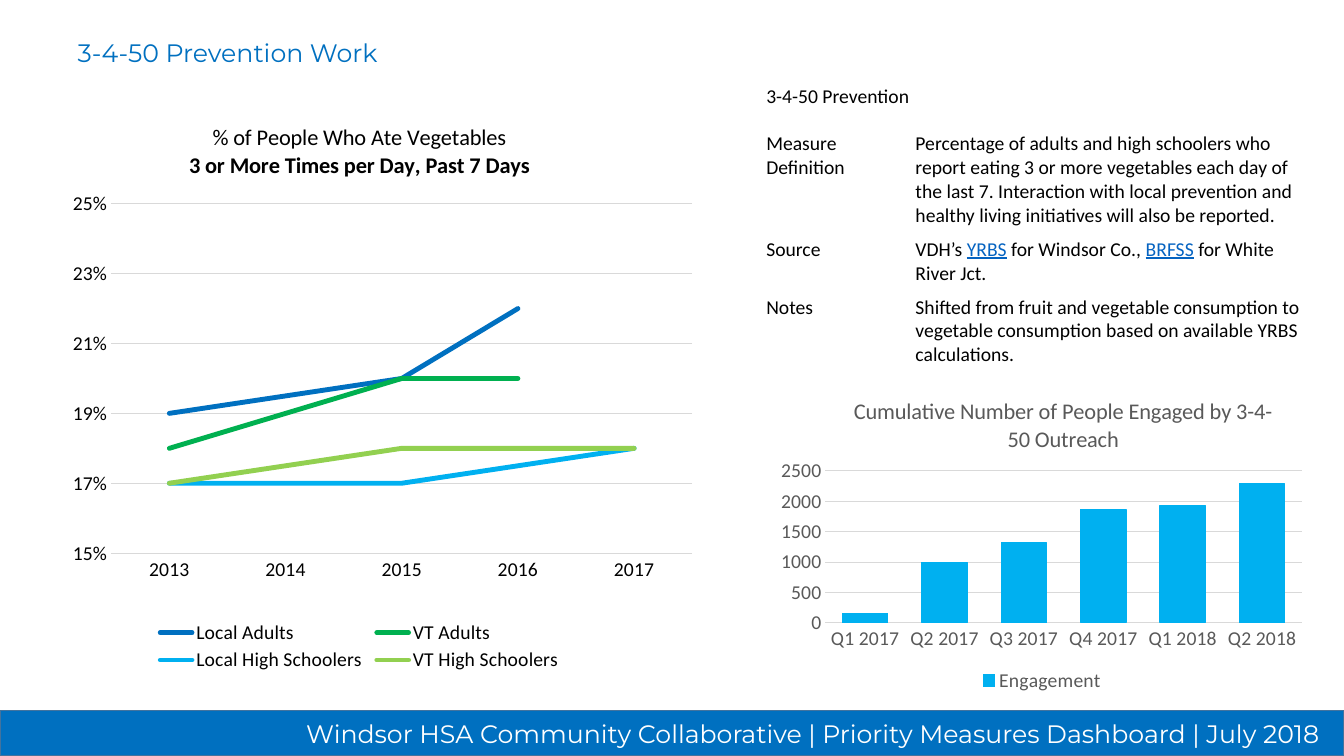
from pptx import Presentation
from pptx.chart.data import CategoryChartData
from pptx.dml.color import RGBColor
from pptx.enum import chart as ch, shapes, text
from pptx.oxml import parse_xml
from pptx.oxml.ns import nsdecls, qn
from pptx.util import Inches, Pt

BLUE = RGBColor(0x00, 0x70, 0xC0)
EDGE = RGBColor(0x43, 0x73, 0x9E)
GREEN = RGBColor(0x00, 0xB0, 0x50)
SKY = RGBColor(0x00, 0xB0, 0xF0)
LIME = RGBColor(0x92, 0xD0, 0x50)
LINK = RGBColor(0x05, 0x63, 0xC1)
GRID = RGBColor(0xD9, 0xD9, 0xD9)
GREY = RGBColor(0x59, 0x59, 0x59)
BLACK = RGBColor(0, 0, 0)
WHITE = RGBColor(255, 255, 255)


def add_run(para, words, size, color, face="Calibri", bold=False):
    run = para.add_run()
    run.text = words
    font = run.font
    font.size, font.name, font.bold = Pt(size), face, bold
    font.color.rgb = color
    return run


def place(part, index, **spots):
    """Fix a chart part at fractions of the chart's size."""
    for old in part.findall(qn("c:layout")):
        part.remove(old)
    modes = '<c:xMode val="edge"/><c:yMode val="edge"/>'
    if index == 0:
        modes = '<c:layoutTarget val="inner"/>' + modes
    vals = "".join(f'<c:{key} val="{val}"/>' for key, val in spots.items())
    part.insert(index, parse_xml(
        f'<c:layout {nsdecls("c")}><c:manualLayout>{modes}{vals}'
        '</c:manualLayout></c:layout>'))


prs = Presentation()
prs.slide_width, prs.slide_height = Inches(13.33), Inches(7.5)
slide = prs.slides.add_slide(prs.slide_layouts[5])

# Title
title = slide.shapes.title
title.left, title.top = Inches(0.67), Inches(0.32)
title.width, title.height = Inches(8.23), Inches(0.4)
frame = title.text_frame
frame.auto_size = text.MSO_AUTO_SIZE.NONE
frame.vertical_anchor = text.MSO_ANCHOR.TOP
frame.paragraphs[0].alignment = text.PP_ALIGN.LEFT
add_run(frame.paragraphs[0], "3-4-50 Prevention Work", 18, BLUE, "Montserrat")

# Footer band
band = slide.shapes.add_shape(shapes.MSO_SHAPE.RECTANGLE, 0, Inches(7.05),
                              Inches(13.33), Inches(0.45))
band.shadow.inherit = False
band.fill.solid()
band.fill.fore_color.rgb = BLUE
band.line.color.rgb = EDGE
band.line.width = Pt(1)
frame = band.text_frame
frame.margin_right = Inches(0.24)
frame.vertical_anchor = text.MSO_ANCHOR.MIDDLE
frame.paragraphs[0].alignment = text.PP_ALIGN.RIGHT
add_run(frame.paragraphs[0],
        "Windsor HSA Community Collaborative | Priority Measures Dashboard | July 2018",
        18, WHITE, "Montserrat")

# Measure table; a run in a tuple looks like a link
rows = [
    (0.47, "3-4-50 Prevention", []),
    (1.03, "Measure Definition", [
        "Percentage of adults and high schoolers who report eating 3 or more "
        "vegetables each day of the last 7. Interaction with local prevention "
        "and healthy living initiatives will also be reported."]),
    (0.57, "Source", ["VDH’s ", ("YRBS",), " for Windsor Co., ", ("BRFSS",),
                      " for White River Jct."]),
    (0.8, "Notes", [
        "Shifted from fruit and vegetable consumption to vegetable "
        "consumption based on available YRBS calculations."]),
]
table = slide.shapes.add_table(len(rows), 2, Inches(7.5), Inches(0.79),
                               Inches(5.52), Inches(2.87)).table
table.first_row = table.horz_banding = False
table.columns[0].width, table.columns[1].width = Inches(1.48), Inches(4.04)
table.cell(0, 0).merge(table.cell(0, 1))
for i, (height, label, body) in enumerate(rows):
    table.rows[i].height = Inches(height)
    for j, parts in enumerate(([label], body)):
        cell = table.cell(i, j)
        cell.fill.background()
        for part in parts:
            linked = isinstance(part, tuple)
            run = add_run(cell.text_frame.paragraphs[0],
                          part[0] if linked else part, 14,
                          LINK if linked else BLACK)
            run.font.underline = linked

# Chart data
diet = CategoryChartData(number_format="0%")
diet.categories = ["2013", "2014", "2015", "2016", "2017"]
diet.add_series("Local Adults", [0.19, None, 0.2, 0.22, None])
diet.add_series("VT Adults", [0.18, None, 0.2, 0.2, None])
diet.add_series("Local High Schoolers", [0.17, None, 0.17, None, 0.18])
diet.add_series("VT High Schoolers", [0.17, None, 0.18, None, 0.18])
reach = CategoryChartData(number_format="General")
reach.categories = ["Q1 2017", "Q2 2017", "Q3 2017", "Q4 2017", "Q1 2018", "Q2 2018"]
reach.add_series("Engagement", [160, 1000, 1320, 1870, 1930, 2290])

# Both charts: kind, data, box, ink, heads, scale, format, title and plot spots
KIND = ch.XL_CHART_TYPE
charts = []
for kind, data, box, ink, heads, scale, form, spot, plot in [
    (KIND.LINE, diet, (0.16, 0.96, 6.74, 5.74), BLACK,
     ["% of People Who Ate Vegetables", "3 or More Times per Day, Past 7 Days"],
     (0.15, 0.25, 0.02), "0%", (0.25, 0.04), (0.14, 0.185, 0.855, 0.604)),
    (KIND.COLUMN_CLUSTERED, reach, (7.65, 3.73, 5.37, 3.18), GREY,
     ["Cumulative Number of People Engaged by 3-4-50 Outreach"],
     (0, 2500, 500), "General", (0.145, 0.05), (0.1, 0.296, 0.88, 0.475)),
]:
    chart = slide.shapes.add_chart(kind, *map(Inches, box), data).chart
    charts.append(chart)
    chart.font.name, chart.font.size = "Calibri", Pt(14)
    chart.font.color.rgb = ink
    chart.plots[0].vary_by_categories = False

    chart.has_title = True
    frame = chart.chart_title.text_frame
    for i, head in enumerate(heads):
        para = frame.add_paragraph() if i else frame.paragraphs[0]
        add_run(para, head, 16, ink, bold=i == 1)
    chart.chart_title.include_in_layout = False
    area = chart.plots[0]._element.getparent()
    place(area.getparent().find(qn("c:title")), 1, x=spot[0], y=spot[1])
    place(area, 0, **dict(zip("xywh", plot)))

    chart.has_legend = True
    chart.legend.position = ch.XL_LEGEND_POSITION.BOTTOM
    chart.legend.include_in_layout = False

    vals, cats = chart.value_axis, chart.category_axis
    vals.minimum_scale, vals.maximum_scale, vals.major_unit = scale
    vals.tick_labels.number_format = form
    vals.tick_labels.number_format_is_linked = False
    vals.format.line.fill.background()
    for axis in (vals, cats):
        axis.major_tick_mark = ch.XL_TICK_MARK.NONE
        axis.tick_labels.font.size = Pt(14)
        axis.tick_labels.font.color.rgb = ink
    for line in (cats.format.line, vals.major_gridlines.format.line):
        line.color.rgb = GRID
        line.width = Pt(0.75)

# Line chart: colours, bridged gaps, legend in two columns
lines, bars = charts
for series, color in zip(lines.plots[0].series, (BLUE, GREEN, SKY, LIME)):
    series.smooth = False
    series.marker.style = ch.XL_MARKER_STYLE.NONE
    series.format.line.color.rgb = color
    series.format.line.width = Pt(3.5)
    series._element.find(".//" + qn("a:ln")).set("cap", "rnd")
root = lines.plots[0]._element.getparent().getparent()
root.find(qn("c:dispBlanksAs")).set("val", "span")
place(root.find(qn("c:legend")), 1, x=0.2, y=0.9, w=0.61, h=0.1)

# Column chart: colour and spacing
bars.plots[0].gap_width, bars.plots[0].overlap = 75, -25
fmt = bars.plots[0].series[0].format
fmt.fill.solid()
fmt.fill.fore_color.rgb = SKY
fmt.line.color.rgb = SKY
fmt.line.width = Pt(0.75)

prs.save("out.pptx")
